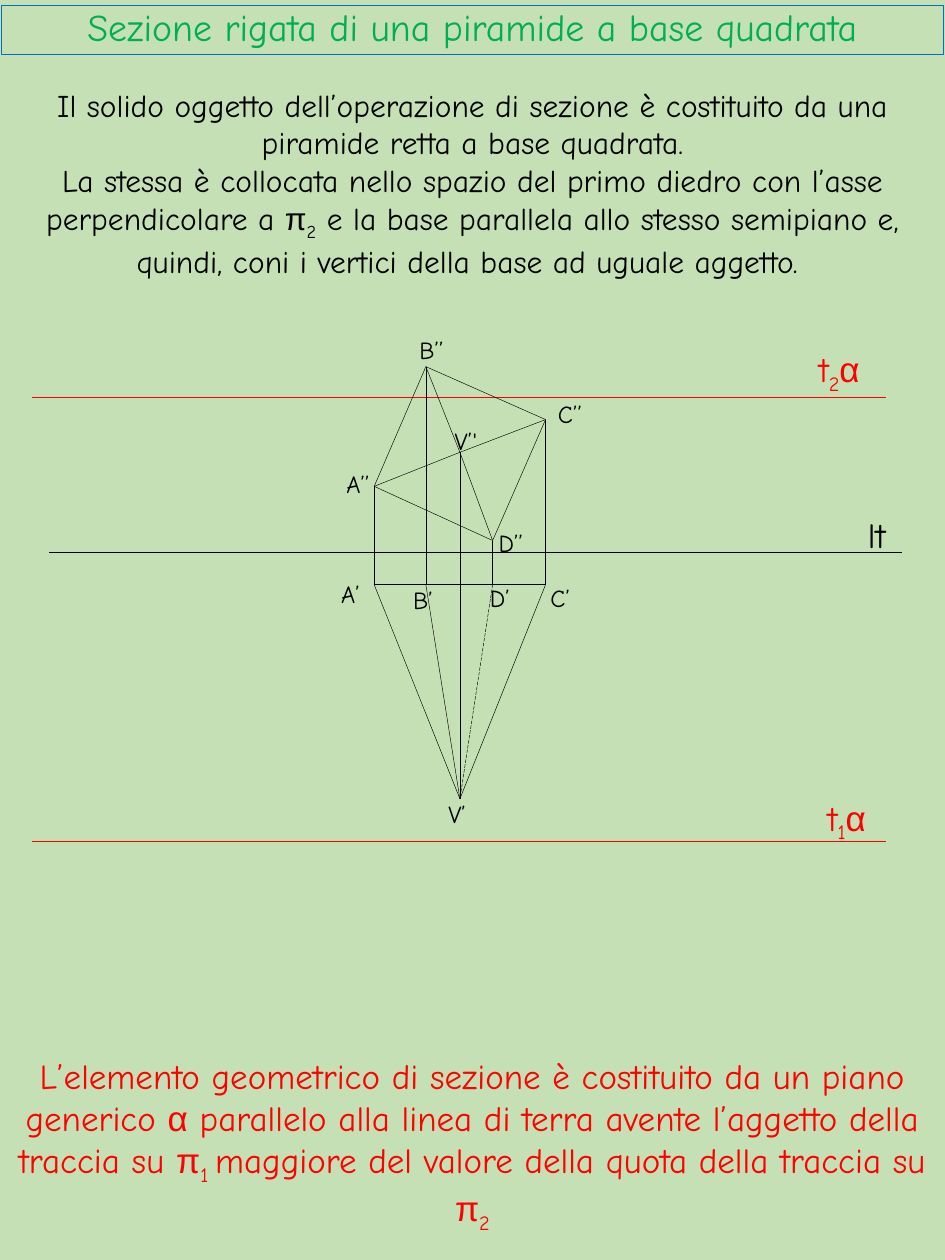
from dataclasses import dataclass

from lxml import etree
from pptx import Presentation
from pptx.dml.color import RGBColor
from pptx.enum.dml import MSO_LINE
from pptx.enum.shapes import MSO_CONNECTOR
from pptx.enum.text import MSO_ANCHOR, MSO_AUTO_SIZE, PP_ALIGN
from pptx.oxml.ns import qn
from pptx.util import Inches, Pt

STRAIGHT = MSO_CONNECTOR.STRAIGHT
LONG_DASH = MSO_LINE.LONG_DASH
CENTER, LEFT = PP_ALIGN.CENTER, PP_ALIGN.LEFT
MIDDLE = MSO_ANCHOR.MIDDLE
NO_FIT, GROW = MSO_AUTO_SIZE.NONE, MSO_AUTO_SIZE.SHAPE_TO_FIT_TEXT

FONT, GREEK_FONT = "Comic Neue", "Arial"
BLACK, RED, GREEN, BLUE, PALE = "000000", "FF0000", "00B050", "0070C0", "C5E0B4"


@dataclass
class Segment:
    start: tuple[float, float]
    end: tuple[float, float]
    color: str = BLACK
    dashed: bool = False


@dataclass
class Piece:
    text: str
    sub: bool = False


@dataclass
class Label:
    paragraphs: list[list[Piece]]
    left: float
    top: float
    width: float
    height: float
    size: float
    color: str = BLACK
    align: PP_ALIGN = LEFT


POINTS = {
    "A2": (2.97, 3.86), "B2": (3.38, 2.91), "C2": (4.33, 3.33),
    "D2": (3.91, 4.29), "V2": (3.65, 3.59),
    "A1": (2.97, 4.64), "B1": (3.38, 4.64), "C1": (4.33, 4.64),
    "D1": (3.91, 4.64), "V1": (3.65, 6.34),
}
EDGES = (
    "A2-B2 B2-C2 C2-D2 D2-A2 A2-V2 B2-V2 C2-V2 D2-V2 "
    "A2-A1 B2-B1 C2-C1 D2-D1 V2-V1 A1-C1 A1-V1 B1-V1 C1-V1 D1-V1"
).split()
HIDDEN_EDGE = "D1-V1"

VERTEX_LABELS = [
    ("A’’", 2.65, 3.67, 0.51), ("A’", 2.61, 4.55, 0.51),
    ("B’", 3.18, 4.59, 0.39), ("B’’", 3.23, 2.61, 0.51),
    ("C’’", 4.33, 3.12, 0.51), ("C’", 4.27, 4.58, 0.39),
    ("V’", 3.46, 6.29, 0.51), ("V’'", 3.51, 3.33, 0.51),
    ("D’’", 3.86, 4.14, 0.51), ("D’", 3.79, 4.58, 0.39),
]

SOLID_TEXT = [
    [Piece("Il solido oggetto dell’operazione di sezione è costituito da una "
           "piramide retta a base quadrata.")],
    [Piece("La stessa è collocata nello spazio del primo diedro con l’asse "
           "perpendicolare a "),
     Piece("π"), Piece("2", True),
     Piece(" e la base parallela allo stesso semipiano e, quindi, coni i vertici "
           "della base ad uguale aggetto. ")],
]
PLANE_TEXT = [
    [Piece("L’elemento geometrico di sezione è costituito da un piano generico "),
     Piece("α"),
     Piece(" parallelo alla linea di terra avente l’aggetto della traccia su "),
     Piece("π"), Piece("1 ", True),
     Piece("maggiore del valore della quota della traccia su "),
     Piece("π"), Piece("2", True)],
]


def rgb(color: str) -> RGBColor:
    return RGBColor.from_string(color)


def draw_segment(shapes, seg: Segment) -> None:
    ends = [Inches(v) for v in (*seg.start, *seg.end)]
    line = shapes.add_connector(STRAIGHT, *ends)
    line.line.color.rgb = rgb(seg.color)
    line.line.width = Pt(0.25)
    if seg.dashed:
        line.line.dash_style = LONG_DASH
    etree.SubElement(line._element.spPr, qn("a:effectLst"))


def write_piece(p, piece: Piece, size: float, color: str) -> None:
    r = p.add_run()
    r.text = piece.text
    r.font.name = GREEK_FONT if piece.text in ("α", "π") else FONT
    r.font.size = Pt(size)
    r.font.color.rgb = rgb(color)
    if piece.sub:
        r._r.get_or_add_rPr().set("baseline", "-25000")


def draw_label(shapes, label: Label) -> None:
    box = [Inches(v) for v in (label.left, label.top, label.width, label.height)]
    tf = shapes.add_textbox(*box).text_frame
    tf.word_wrap = True
    tf.auto_size = GROW
    for i, pieces in enumerate(label.paragraphs):
        p = tf.add_paragraph() if i else tf.paragraphs[0]
        p.alignment = label.align
        for piece in pieces:
            write_piece(p, piece, label.size, label.color)


def format_title(sp) -> None:
    sp.left, sp.top = Inches(0.01), Inches(0.04)
    sp.width, sp.height = Inches(7.48), Inches(0.39)
    sp.line.color.rgb = rgb(BLUE)
    sp.line.width = Pt(0.25)
    tf = sp.text_frame
    tf.auto_size = NO_FIT
    tf.word_wrap = True
    tf.vertical_anchor = MIDDLE
    p = tf.paragraphs[0]
    p.alignment = CENTER
    p.line_spacing = 0.9
    write_piece(p, Piece("Sezione rigata di una piramide a base quadrata"), 21.6, GREEN)


def main() -> None:
    prs = Presentation()
    prs.slide_width, prs.slide_height = Inches(7.5), Inches(10)
    s = prs.slides.add_slide(prs.slide_layouts[5])
    s.background.fill.solid()
    s.background.fill.fore_color.rgb = rgb(PALE)
    format_title(s.shapes.title)

    segments = [Segment((0.39, 4.38), (7.16, 4.38))]
    segments += [Segment((0.25, y), (7.03, y), RED) for y in (3.15, 6.68)]
    for edge in EDGES:
        start, end = edge.split("-")
        segments.append(Segment(POINTS[start], POINTS[end], dashed=edge == HIDDEN_EDGE))
    for seg in segments:
        draw_segment(s.shapes, seg)

    labels = [Label([[Piece(text)]], left, top, width, 0.34, 14)
              for text, left, top, width in VERTEX_LABELS]
    for index, left, top in (("2", 6.4, 2.71), ("1", 6.47, 6.27)):
        trace = [Piece("t"), Piece(index, True), Piece("α")]
        labels.append(Label([trace], left, top, 0.65, 0.44, 20, RED))
    labels += [
        Label([[Piece("lt")]], 6.79, 4.03, 0.57, 0.44, 20),
        Label(SOLID_TEXT, 0.01, 0.63, 7.48, 1.62, 18, BLACK, CENTER),
        Label(PLANE_TEXT, 0.01, 8.32, 7.48, 1.45, 20, RED, CENTER),
    ]
    for label in labels:
        draw_label(s.shapes, label)

    prs.save("out.pptx")


if __name__ == "__main__":
    main()
